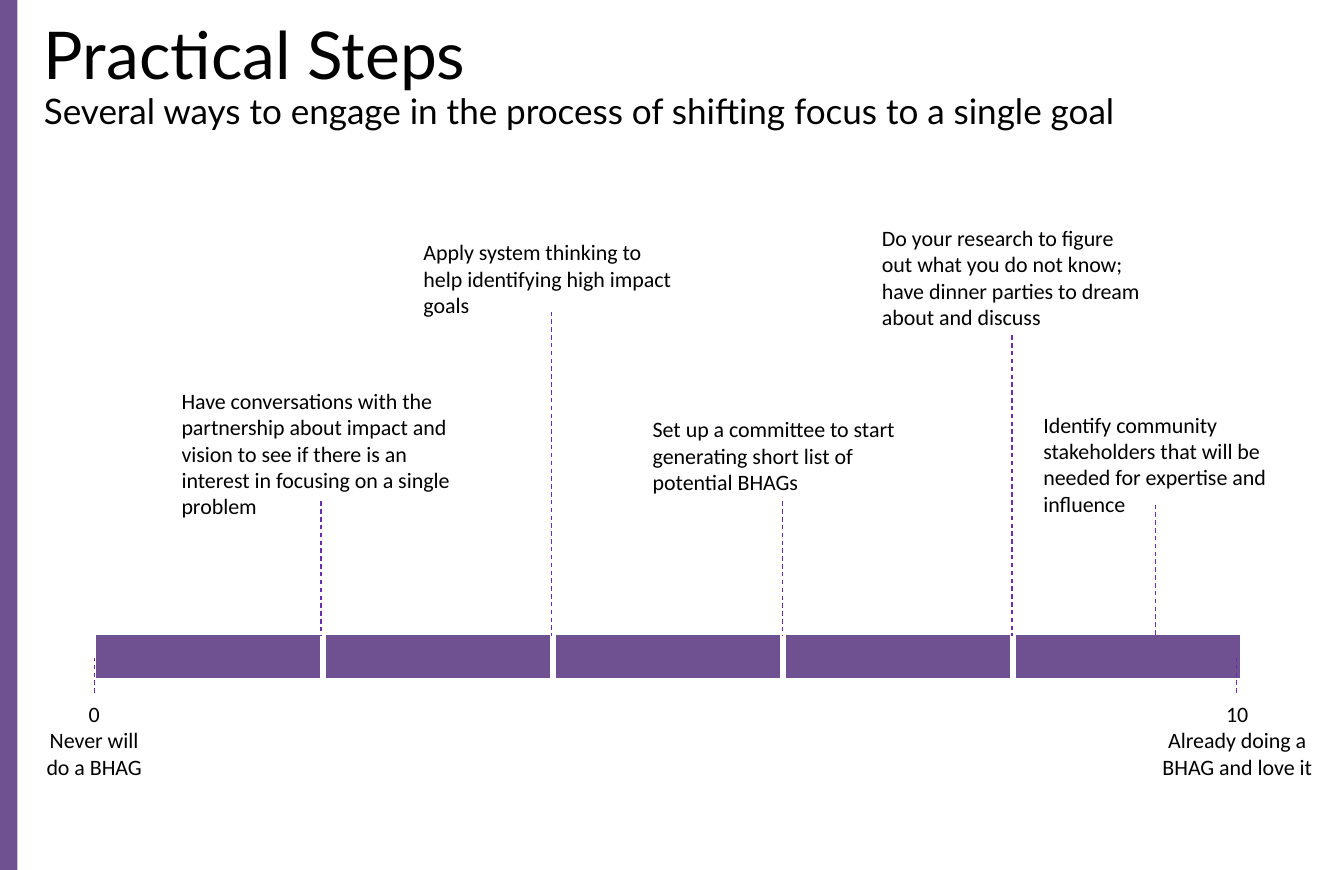
from lxml import etree
from pptx import Presentation
from pptx.dml.color import RGBColor
from pptx.enum.dml import MSO_LINE
from pptx.enum.shapes import MSO_CONNECTOR, MSO_SHAPE
from pptx.enum.text import MSO_ANCHOR, PP_ALIGN
from pptx.oxml.ns import qn
from pptx.util import Inches, Pt

RECT = MSO_SHAPE.RECTANGLE
STRAIGHT = MSO_CONNECTOR.STRAIGHT
DASH = MSO_LINE.DASH
TOP, MIDDLE = MSO_ANCHOR.TOP, MSO_ANCHOR.MIDDLE
LEFT, CENTER = PP_ALIGN.LEFT, PP_ALIGN.CENTER

COLORS = {"purple": "6F5091", "violet": "6C2CB2", "text": "000000", "white": "FFFFFF"}
BORDERS = {"a:lnL": 3, "a:lnR": 3, "a:lnT": 1, "a:lnB": 1}


def rgb(name):
    return RGBColor.from_string(COLORS[name])


class TimelineSlide:
    title_font = "Lato"
    body_font = "Calibri"
    body_size = 10

    def __init__(self, prs):
        self.s = prs.slides.add_slide(prs.slide_layouts[6])

    def bar(self, x, y, w, h):
        sp = self.s.shapes.add_shape(RECT, Inches(x), Inches(y), Inches(w), Inches(h))
        sp.shadow.inherit = False
        sp.fill.solid()
        sp.fill.fore_color.rgb = rgb("purple")
        sp.line.fill.background()

    def text(self, x, y, w, h, lines, font, anchor=TOP, align=LEFT, spacing=1.0):
        tf = self.s.shapes.add_textbox(Inches(x), Inches(y), Inches(w), Inches(h)).text_frame
        tf.word_wrap = True
        tf.vertical_anchor = anchor
        for i, (line, size) in enumerate(lines):
            p = tf.add_paragraph() if i else tf.paragraphs[0]
            p.text = line
            p.alignment = align
            p.line_spacing = spacing
            p.font.name = font
            p.font.size = Pt(size)
            p.font.color.rgb = rgb("text")

    def title(self, x, y, w, h, lines):
        self.text(x, y, w, h, lines, self.title_font, anchor=MIDDLE, spacing=0.9)

    def note(self, x, y, w, h, *lines, align=LEFT):
        self.text(x, y, w, h, [(line, self.body_size) for line in lines],
                  self.body_font, align=align)

    def dashed_line(self, x, y1, y2):
        c = self.s.shapes.add_connector(STRAIGHT, Inches(x), Inches(y1), Inches(x), Inches(y2))
        c.line.color.rgb = rgb("violet")
        c.line.width = Pt(0.5)
        c.line.dash_style = DASH
        etree.SubElement(c._element.spPr, qn("a:effectLst"))

    def scale(self, x, y, w, h, steps):
        table = self.s.shapes.add_table(1, steps, Inches(x), Inches(y), Inches(w), Inches(h)).table
        table.first_row = table.horz_banding = False
        for column in table.columns:
            column.width = Inches(w / steps)
        for cell in table.iter_cells():
            cell.margin_top = cell.margin_bottom = 0
            cell.fill.solid()
            cell.fill.fore_color.rgb = rgb("purple")
            cell.text_frame.paragraphs[0]._p.get_or_add_endParaRPr().set("sz", "1000")
            self.borders(cell)

    def borders(self, cell):
        tcPr = cell._tc.get_or_add_tcPr()
        for i, (tag, width) in enumerate(BORDERS.items()):
            ln = etree.Element(qn(tag), w=str(Pt(width)))
            fill = etree.SubElement(ln, qn("a:solidFill"))
            etree.SubElement(fill, qn("a:srgbClr"), val=COLORS["white"])
            tcPr.insert(i, ln)


def main():
    prs = Presentation()
    prs.slide_width, prs.slide_height = Inches(8.5), Inches(5.5)
    slide = TimelineSlide(prs)

    slide.bar(0, 0, 0.11, 5.5)
    slide.title(0.18, 0.08, 7.63, 0.82, [
        ("Practical Steps", 30),
        ("Several ways to engage in the process of shifting focus to a single goal", 16),
    ])
    slide.scale(0.59, 4.01, 7.27, 0.28, 5)

    steps = [
        (1.05, 2.4, 1.97, 0.94, 2.03, 3.17,
         "Have conversations with the partnership about impact and vision to see "
         "if there is an interest in focusing on a single problem"),
        (2.58, 1.46, 1.83, 0.61, 3.49, 1.97,
         "Apply system thinking to help identifying high impact goals"),
        (4.03, 2.58, 1.83, 0.61, 4.95, 3.17,
         "Set up a committee to start generating short list of potential BHAGs"),
        (5.48, 1.37, 1.83, 0.77, 6.4, 2.12,
         "Do your research to figure out what you do not know; "
         "have dinner parties to dream about and discuss"),
        (6.5, 2.55, 1.62, 0.77, 7.31, 3.19,
         "Identify community stakeholders that will be needed for expertise and influence"),
    ]
    for x, y, w, h, line_x, line_y, step in steps:
        slide.note(x, y, w, h, step)
        slide.dashed_line(line_x, line_y, 4.02)

    ends = [
        (0.15, 0.89, 0.6, "0", "Never will do a BHAG"),
        (7.21, 1.23, 7.82, "10", "Already doing a BHAG and love it"),
    ]
    for x, w, line_x, value, label in ends:
        slide.note(x, 4.38, w, 0.61, value, label, align=CENTER)
        slide.dashed_line(line_x, 4.38, 4.16)

    prs.save("out.pptx")


if __name__ == "__main__":
    main()
